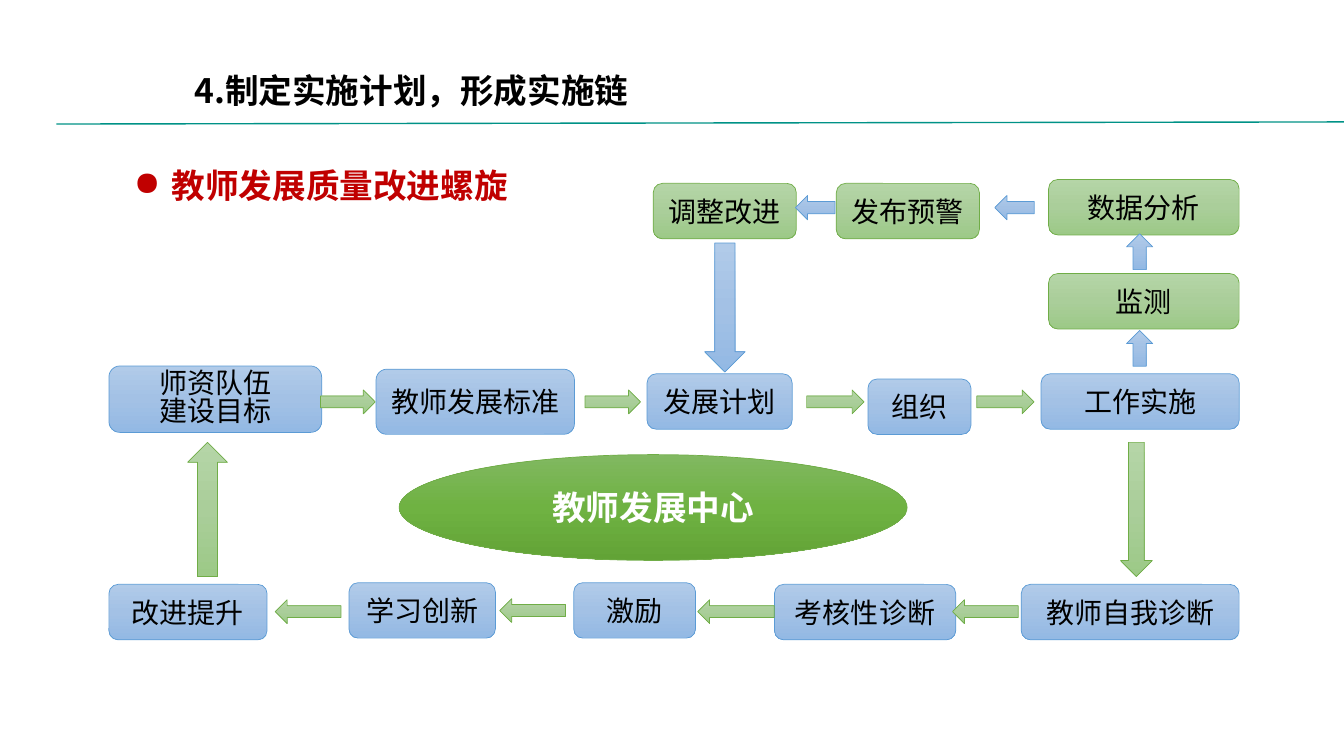
from copy import deepcopy

from lxml import etree
from pptx import Presentation
from pptx.dml.color import RGBColor
from pptx.enum import shapes, text
from pptx.oxml import ns
from pptx.util import Pt

BLACK = RGBColor(0x00, 0x00, 0x00)
WHITE = RGBColor(0xFF, 0xFF, 0xFF)
RED = RGBColor(0xC0, 0x00, 0x00)
TEAL = RGBColor(0x00, 0x92, 0x87)
BLUE_LINE = RGBColor(0x5B, 0x9B, 0xD5)
GREEN_LINE = RGBColor(0x70, 0xAD, 0x47)
BLUE = (RGBColor(0xB1, 0xCB, 0xE9), RGBColor(0xA3, 0xC1, 0xE5), RGBColor(0x93, 0xB9, 0xE4))
GREEN = (RGBColor(0xB5, 0xD5, 0xA7), RGBColor(0xAA, 0xCE, 0x9A), RGBColor(0x9C, 0xC9, 0x87))
DEEP_GREEN = (RGBColor(0x81, 0xB8, 0x61), RGBColor(0x6F, 0xB2, 0x42), RGBColor(0x62, 0xA3, 0x36))
SHAPE = shapes.MSO_SHAPE
BOX_H = 39.6


class Deck:
    font = "Noto Sans CJK SC"

    def __init__(self, width, height):
        self.prs = Presentation()
        self.prs.slide_width, self.prs.slide_height = Pt(width), Pt(height)
        self.s = self.prs.slides.add_slide(self.prs.slide_layouts[6])

    def add_lines(self, tf, lines, size, color, bold=False, align=None, font=None):
        tf.word_wrap = True
        tf.margin_top = tf.margin_bottom = 0
        for i, line in enumerate(lines):
            p = tf.paragraphs[0] if i == 0 else tf.add_paragraph()
            p.alignment = align
            if len(lines) > 1:
                p.line_spacing = 0.82
            r = p.add_run()
            r.text = line
            r.font.size, r.font.bold = Pt(size), bold
            r.font.name = font or self.font
            r.font.color.rgb = color
            ea = etree.SubElement(r.font._element, ns.qn("a:ea"))
            ea.set("typeface", self.font)

    def shape(self, kind, x, y, w, h, colors, line):
        sp = self.s.shapes.add_shape(kind, Pt(x), Pt(y), Pt(w), Pt(h))
        sp.shadow.inherit = False
        sp.fill.gradient()
        sp.fill.gradient_angle = 270
        first = sp._element.spPr.find(".//" + ns.qn("a:gs"))
        first.addnext(deepcopy(first))
        for stop, position, color in zip(sp.fill.gradient_stops, (0, 0.5, 1), colors):
            stop.position = position
            stop.color.rgb = color
        sp.line.color.rgb = line
        sp.line.width = Pt(0.5)
        return sp

    def label(self, kind, x, y, w, h, colors, line, lines, size=20, color=BLACK, bold=False):
        tf = self.shape(kind, x, y, w, h, colors, line).text_frame
        tf.vertical_anchor = text.MSO_ANCHOR.MIDDLE
        self.add_lines(tf, lines, size, color, bold, text.PP_ALIGN.CENTER)

    def text_box(self, x, y, w, h, words, color, anchor, font=None):
        tf = self.s.shapes.add_textbox(Pt(x), Pt(y), Pt(w), Pt(h)).text_frame
        tf.vertical_anchor = anchor
        self.add_lines(tf, [words], 24, color, True, font=font)
        return tf.paragraphs[0]

    def bullet(self, p, indent):
        pPr = p._p.get_or_add_pPr()
        pPr.set("marL", str(Pt(indent)))
        pPr.set("indent", str(-Pt(indent)))
        etree.SubElement(pPr, ns.qn("a:buChar")).set("char", "●")

    def rule(self, x1, y1, x2, y2, color):
        c = self.s.shapes.add_connector(shapes.MSO_CONNECTOR.STRAIGHT, Pt(x1), Pt(y1), Pt(x2), Pt(y2))
        c.line.color.rgb = color
        c.line.width = Pt(1)
        etree.SubElement(c._element.spPr, ns.qn("a:effectLst"))


def main():
    deck = Deck(960, 540)

    plan_steps = [
        (77.8, 261.4, 152, 47.5, "师资队伍", "建设目标"),
        (268.6, 263.7, 141.8, 46.6, "教师发展标准"),
        (462.2, 267, 103.7, BOX_H, "发展计划"),
        (620, 270.7, 73.6, BOX_H, "组织"),
        (743.6, 267, 141.6, BOX_H, "工作实施"),
        (729.5, 417.4, 155.6, BOX_H, "教师自我诊断"),
        (553.2, 417.4, 129.5, BOX_H, "考核性诊断"),
        (409.8, 416.2, 87, BOX_H, "激励"),
        (249.3, 416.2, 104.6, BOX_H, "学习创新"),
        (77.8, 417.4, 113, BOX_H, "改进提升"),
    ]
    monitor_steps = [
        (749, 195.4, 136.1, BOX_H, "监测"),
        (749, 128.2, 136.1, BOX_H, "数据分析"),
        (597.4, 131, 102.2, BOX_H, "发布预警"),
        (466.6, 131, 102.2, BOX_H, "调整改进"),
    ]
    for steps, colors, line in ((plan_steps, BLUE, BLUE_LINE), (monitor_steps, GREEN, GREEN_LINE)):
        for x, y, w, h, *lines in steps:
            deck.label(SHAPE.ROUNDED_RECTANGLE, x, y, w, h, colors, line, lines)
    deck.label(SHAPE.OVAL, 285.1, 324.7, 362.9, 75.6, DEEP_GREEN, GREEN_LINE,
               ["教师发展中心"], 24, WHITE, True)

    plan_arrows = [
        (SHAPE.RIGHT_ARROW, 229, 278.6, 39, 17),
        (SHAPE.RIGHT_ARROW, 417.9, 278.6, 39.6, 17),
        (SHAPE.RIGHT_ARROW, 576.2, 278.6, 41, 17),
        (SHAPE.RIGHT_ARROW, 697.7, 278.6, 41, 17),
        (SHAPE.DOWN_ARROW, 800.4, 316, 22.7, 95.8),
        (SHAPE.LEFT_ARROW, 680.4, 428.4, 47, 17),
        (SHAPE.LEFT_ARROW, 498.4, 428.4, 54.7, 17),
        (SHAPE.LEFT_ARROW, 357, 427.6, 47, 17),
        (SHAPE.LEFT_ARROW, 196.6, 428.4, 47, 17),
        (SHAPE.UP_ARROW, 134, 316, 28.5, 95.8),
    ]
    monitor_arrows = [
        (SHAPE.UP_ARROW, 804.7, 236, 18.7, 25.6),
        (SHAPE.UP_ARROW, 804.7, 167, 18.7, 25.6),
        (SHAPE.LEFT_ARROW, 710.6, 139.7, 28.2, 17.3),
        (SHAPE.LEFT_ARROW, 568.2, 139.7, 28.2, 17.3),
        (SHAPE.DOWN_ARROW, 503.3, 173.5, 29, 92.2),
    ]
    for arrow in plan_arrows:
        deck.shape(*arrow, GREEN, GREEN_LINE)
    for arrow in monitor_arrows:
        deck.shape(*arrow, BLUE, BLUE_LINE)

    subtitle = deck.text_box(88.6, 118, 420.5, 51, "教师发展质量改进螺旋", RED,
                             text.MSO_ANCHOR.TOP, "Arial")
    deck.bullet(subtitle, 27)
    deck.text_box(131.8, 46, 416, 36, "4.制定实施计划，形成实施链", BLACK, text.MSO_ANCHOR.MIDDLE)
    deck.rule(40.3, 88.6, 962, 87.1, TEAL)
    deck.prs.save("out.pptx")


if __name__ == "__main__":
    main()
